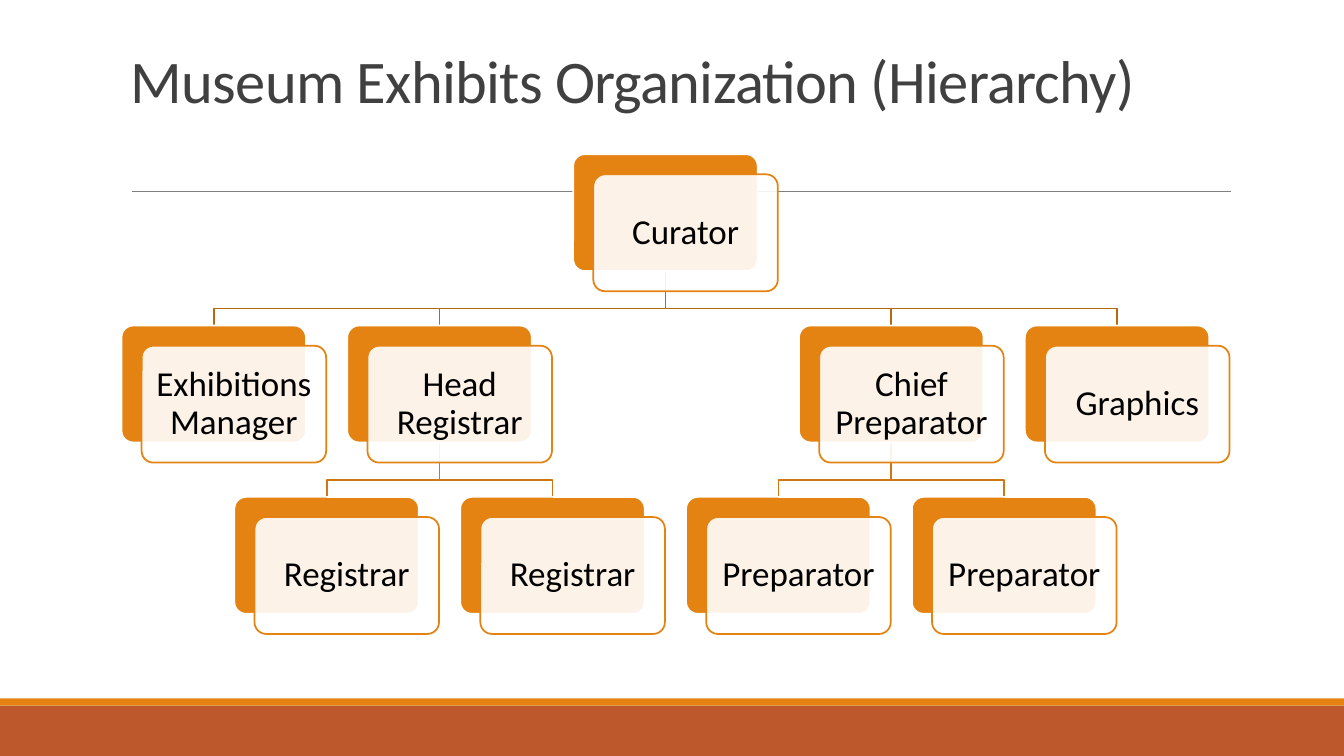
from lxml.etree import SubElement
from pptx import Presentation
from pptx.dml.color import RGBColor
from pptx.enum.shapes import MSO_CONNECTOR, MSO_SHAPE
from pptx.enum.text import MSO_ANCHOR, PP_ALIGN
from pptx.oxml.ns import qn
from pptx.util import Inches, Pt

ORANGE = "E48312"
WIDE, HIGH = 1.83, 1.16
MID, STEP = 6.6, 1.12
TOP, PITCH = 1.53, 1.7
SHIFT = 0.2

STAFF = [
    ("Curator", 0, 0, None),
    ("Exhibitions Manager", 1, -4, 0),
    ("Head Registrar", 1, -2, 0),
    ("Chief Preparator", 1, 2, 0),
    ("Graphics", 1, 4, 0),
    ("Registrar", 2, -3, -2),
    ("Registrar", 2, -1, -2),
    ("Preparator", 2, 1, 2),
    ("Preparator", 2, 3, 2),
]
LINKS = {1: "B7690E", 2: "CF7710"}


def tint(color, code):
    """Set a colour from a hex string."""
    color.rgb = RGBColor.from_string(code)


def box(slide, kind, left, top, wide, high, fill, edge=None):
    """Add a filled preset shape with an optional outline."""
    shape = slide.shapes.add_shape(
        kind, Inches(left), Inches(top), Inches(wide), Inches(high))
    shape.shadow.inherit = False
    shape.fill.solid()
    tint(shape.fill.fore_color, fill)
    if edge:
        tint(shape.line.color, edge)
        shape.line.width = Pt(1.25)
    else:
        shape.line.fill.background()
    return shape


def write(shape, text, size, code, space):
    """Put one formatted paragraph in a shape and return it."""
    frame = shape.text_frame
    frame.word_wrap = True
    frame.text = text
    para = frame.paragraphs[0]
    para.line_spacing = space
    font = para.runs[0].font
    font.name, font.size = "Calibri", Pt(size)
    tint(font.color, code)
    return para


def title(slide, text):
    """Add the slide title and the rule under it."""
    rule = slide.shapes.add_connector(
        MSO_CONNECTOR.STRAIGHT, Inches(1.31), Inches(1.9), Inches(12.21), Inches(1.9))
    tint(rule.line.color, "808080")
    rule.line.width = Pt(0.5)
    SubElement(rule.element.spPr, qn("a:effectLst"))
    shape = slide.shapes.add_textbox(Inches(1.2), Inches(0.31), Inches(11), Inches(0.89))
    para = write(shape, text, 43.2, "404040", 0.85)
    shape.text_frame.vertical_anchor = MSO_ANCHOR.BOTTOM
    para.runs[0].font._element.set("spc", "-50")


def elbow(slide, row, slot, boss):
    """Draw the bent line from a boss down to a post."""
    start, end = (Inches(MID + STEP * place) for place in (boss, slot))
    foot = TOP + PITCH * row
    high, bend, low = (Inches(y) for y in (foot - PITCH + HIGH, foot - 0.17, foot))
    pen = slide.shapes.build_freeform(start, high)
    pen.add_line_segments([(start, bend), (end, bend), (end, low)], close=False)
    shape = pen.convert_to_shape()
    shape.shadow.inherit = False
    shape.fill.background()
    tint(shape.line.color, LINKS[row])
    shape.line.width = Pt(1.25)


def card(slide, text, row, slot):
    """Draw a post as a solid card with a sheer card over it."""
    left = MID + STEP * slot - WIDE / 2
    top = TOP + PITCH * row
    kind = MSO_SHAPE.ROUNDED_RECTANGLE
    back = box(slide, kind, left, top, WIDE, HIGH, ORANGE, "FFFFFF")
    front = box(slide, kind, left + SHIFT, top + SHIFT, WIDE, HIGH, "FFFFFF", ORANGE)
    for shape in (back, front):
        shape.adjustments[0] = 0.1
    color = front.element.spPr.find(qn("a:solidFill"))[0]
    SubElement(color, qn("a:alpha")).set("val", "90000")
    para = write(front, text, 25, "000000", 0.9)
    para.alignment = PP_ALIGN.CENTER
    frame = front.text_frame
    frame.vertical_anchor = MSO_ANCHOR.MIDDLE
    frame.margin_left = frame.margin_right = Inches(0.1)
    frame.margin_top = frame.margin_bottom = Inches(0.1)


def main():
    """Build the slide and save it."""
    deck = Presentation()
    deck.slide_width, deck.slide_height = Inches(13.33), Inches(7.5)
    slide = deck.slides.add_slide(deck.slide_layouts[6])
    box(slide, MSO_SHAPE.RECTANGLE, 0, 7, 13.33, 0.5, "BD582C")
    box(slide, MSO_SHAPE.RECTANGLE, 0, 6.93, 13.33, 0.07, ORANGE)
    title(slide, "Museum Exhibits Organization (Hierarchy)")
    for _, row, slot, boss in STAFF:
        if boss is not None:
            elbow(slide, row, slot, boss)
    for text, row, slot, _ in STAFF:
        card(slide, text, row, slot)
    deck.save("out.pptx")


if __name__ == "__main__":
    main()
